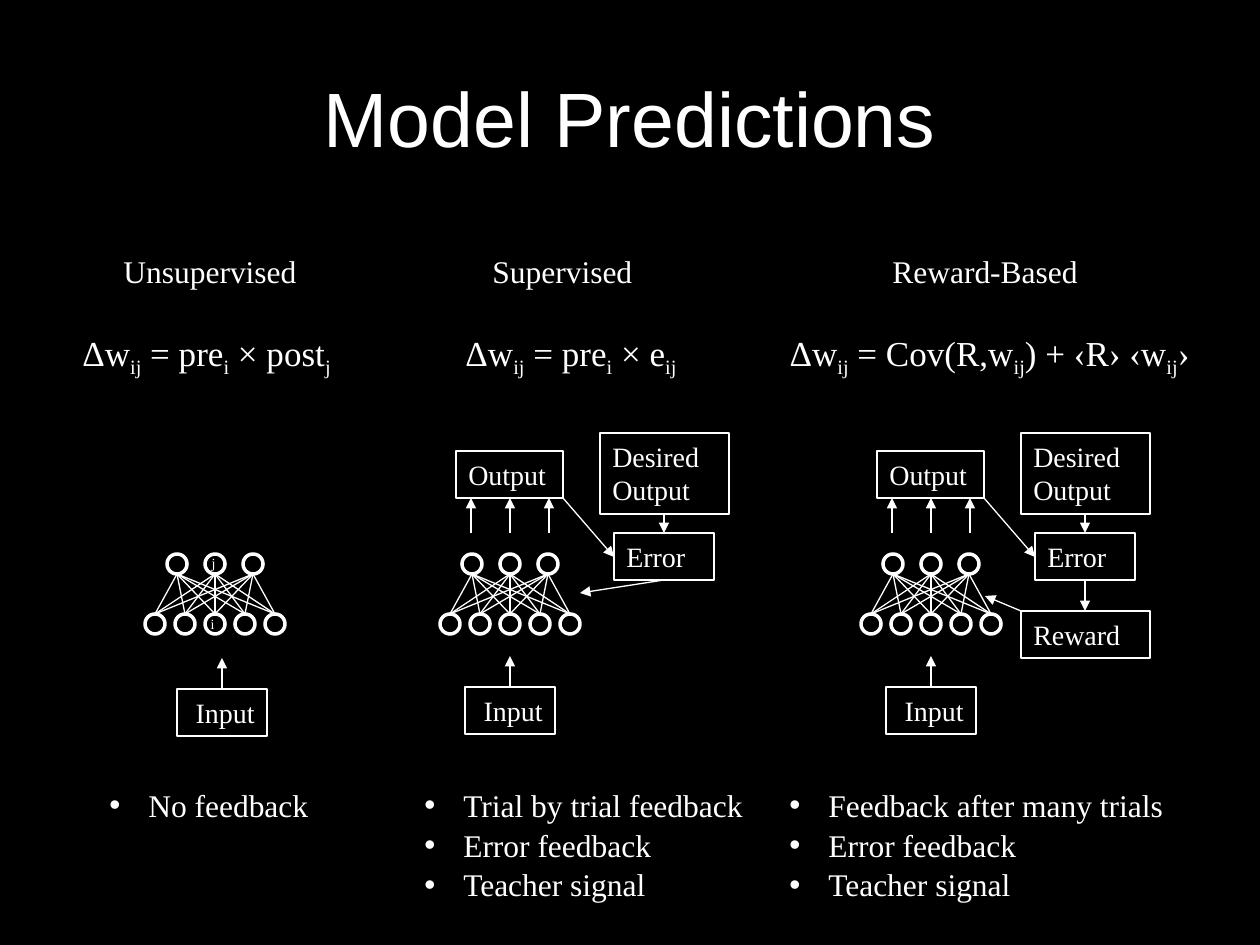
from itertools import product

from lxml import etree
from pptx import Presentation
from pptx.dml.color import RGBColor
from pptx.enum.shapes import MSO_CONNECTOR, MSO_SHAPE
from pptx.enum.text import MSO_ANCHOR, PP_ALIGN
from pptx.oxml.ns import qn
from pptx.util import Emu, Pt

LINE = MSO_CONNECTOR.STRAIGHT
RECT, OVAL = MSO_SHAPE.RECTANGLE, MSO_SHAPE.OVAL
TOP, MIDDLE = MSO_ANCHOR.TOP, MSO_ANCHOR.MIDDLE
LEFT, MID, RIGHT = PP_ALIGN.LEFT, PP_ALIGN.CENTER, PP_ALIGN.RIGHT
SCALE = 914400 / 126
WHITE, BLACK = "FFFFFF", "000000"
SERIF, SANS = "Times New Roman", "Arial"


def px(n):
    """Turn pixels into EMU."""
    return Emu(round(n * SCALE))


def color(code):
    """Turn a hex string into a colour."""
    return RGBColor.from_string(code)


def add_run(para, text, size, face=SERIF, low=False):
    """Add one styled run, lowered if it is a subscript."""
    run = para.add_run()
    run.text = text
    run.font.size, run.font.name = Pt(size), face
    run.font.color.rgb = color(WHITE)
    if low:
        run.font._element.set("baseline", "-25000")


def add_text(slide, box, size, wrap=True):
    """Add an empty text box and return its frame."""
    frame = slide.shapes.add_textbox(*map(px, box)).text_frame
    frame.word_wrap = wrap
    frame.vertical_anchor = TOP
    return frame


def add_label(slide, box, text, size=18, wrap=True):
    """Add a plain one-line label."""
    frame = add_text(slide, box, size, wrap)
    add_run(frame.paragraphs[0], text, size)


def add_rule(slide, box, parts):
    """Add a learning rule whose odd parts are subscripts."""
    para = add_text(slide, box, 20).paragraphs[0]
    para.alignment = MID
    for i, part in enumerate(parts):
        add_run(para, part, 20, low=i % 2 == 1)


def add_list(slide, box, items):
    """Add a bulleted list."""
    frame = add_text(slide, box, 18)
    for i, item in enumerate(items):
        para = frame.add_paragraph() if i else frame.paragraphs[0]
        props = para._p.get_or_add_pPr()
        props.set("marL", str(px(39)))
        props.set("indent", str(px(-39)))
        etree.SubElement(props, qn("a:buFont")).set("typeface", SANS)
        etree.SubElement(props, qn("a:buChar")).set("char", "•")
        if i:
            para.space_before = Pt(1)
        add_run(para, item, 18)


def add_shape(shapes, kind, box, width):
    """Add an unfilled shape with a white outline."""
    shape = shapes.add_shape(kind, *map(px, box))
    shape.shadow.inherit = False
    shape.fill.background()
    shape.line.color.rgb = color(WHITE)
    shape.line.width = Pt(width)
    return shape


def add_box(slide, box, text, align=LEFT):
    """Add an outlined box with a caption."""
    frame = add_shape(slide.shapes, RECT, box, 0.75).text_frame
    frame.word_wrap = True
    frame.vertical_anchor = TOP
    para = frame.paragraphs[0]
    para.alignment = align
    add_run(para, text, 16)


def add_line(shapes, start, end):
    """Add a thin white line."""
    line = shapes.add_connector(LINE, *map(px, start + end))
    line.line.color.rgb = color(WHITE)
    line.line.width = Pt(0.75)
    etree.SubElement(line._element.spPr, qn("a:effectLst"))
    return line


def add_arrow(slide, start, end):
    """Add a line with a triangle at its end."""
    line = add_line(slide.shapes, start, end)
    tail = etree.SubElement(line.line._get_or_add_ln(), qn("a:tailEnd"))
    tail.set("type", "triangle")


def add_net(slide, mid):
    """Add a two-layer network centred on mid."""
    shapes = slide.shapes.add_group_shape().shapes
    lower = [mid + 30 * i for i in range(-2, 3)]
    upper = [mid + 38 * i for i in range(-1, 2)]
    for row, y in ((lower, 614), (upper, 554)):
        for x in row:
            add_shape(shapes, OVAL, (x - 10, y, 20, 20), 2)
    for low, high in product(lower, upper):
        add_line(shapes, (low, 614), (high, 574))


def add_input(slide, mid, y):
    """Add the input box and its arrow."""
    add_box(slide, (mid - 45, y, 90, 47), "Input", RIGHT)
    add_arrow(slide, (mid, y), (mid, y - 31))


def add_error(slide, mid):
    """Add the output, target and error boxes with their arrows."""
    add_box(slide, (mid - 54, 451, 107, 47), "Output")
    add_box(slide, (mid + 90, 433, 129, 81), "Desired Output")
    add_box(slide, (mid + 104, 533, 100, 47), "Error")
    for step in (-39, 0, 39):
        add_arrow(slide, (mid + step, 533), (mid + step, 498))
    add_arrow(slide, (mid + 53, 498), (mid + 104, 557))
    add_arrow(slide, (mid + 154, 514), (mid + 154, 533))


def add_title(slide, text):
    """Place and style the title."""
    title = slide.shapes.title
    title.left, title.top, title.width, title.height = map(px, (63, 38, 1134, 158))
    title.text_frame.vertical_anchor = MIDDLE
    para = title.text_frame.paragraphs[0]
    para.alignment = MID
    add_run(para, text, 44, SANS)


def main():
    """Build the slide."""
    deck = Presentation()
    deck.slide_width, deck.slide_height = px(1260), px(945)
    slide = deck.slides.add_slide(deck.slide_layouts[5])
    slide.background.fill.solid()
    slide.background.fill.fore_color.rgb = color(BLACK)
    add_title(slide, "Model Predictions")

    add_label(slide, (111, 246, 208, 50), "Unsupervised")
    add_label(slide, (480, 246, 208, 50), "Supervised")
    add_label(slide, (880, 246, 246, 50), "Reward-Based")

    delta = ["Δw", "ij"]
    add_rule(slide, (59, 325, 295, 49), delta + [" = pre", "i", " × post", "j"])
    add_rule(slide, (433, 325, 276, 49), delta + [" = pre", "i", " × e", "ij"])
    add_rule(slide, (758, 325, 463, 49),
             delta + [" = Cov(R,w", "ij", ") + ‹R› ‹w", "ij", "›"])

    first, second, third = 215, 510, 931
    for mid in (first, second, third):
        add_net(slide, mid)
    add_label(slide, (203, 609, 20, 30), "i", 8, False)
    add_label(slide, (204, 548, 20, 30), "j", 8, False)
    add_input(slide, first + 7, 689)
    for mid in (second, third):
        add_input(slide, mid, 687)
        add_error(slide, mid)

    add_arrow(slide, (second + 154, 580), (second + 70, 593))
    add_arrow(slide, (third + 154, 580), (third + 154, 611))
    add_box(slide, (third + 90, 611, 129, 47), "Reward")
    add_arrow(slide, (third + 90, 611), (third + 54, 596))

    shared = ["Error feedback", "Teacher signal"]
    add_list(slide, (97, 780, 237, 50), ["No feedback"])
    add_list(slide, (412, 780, 350, 127), ["Trial by trial feedback"] + shared)
    add_list(slide, (777, 780, 450, 127), ["Feedback after many trials"] + shared)
    deck.save("out.pptx")


if __name__ == "__main__":
    main()
